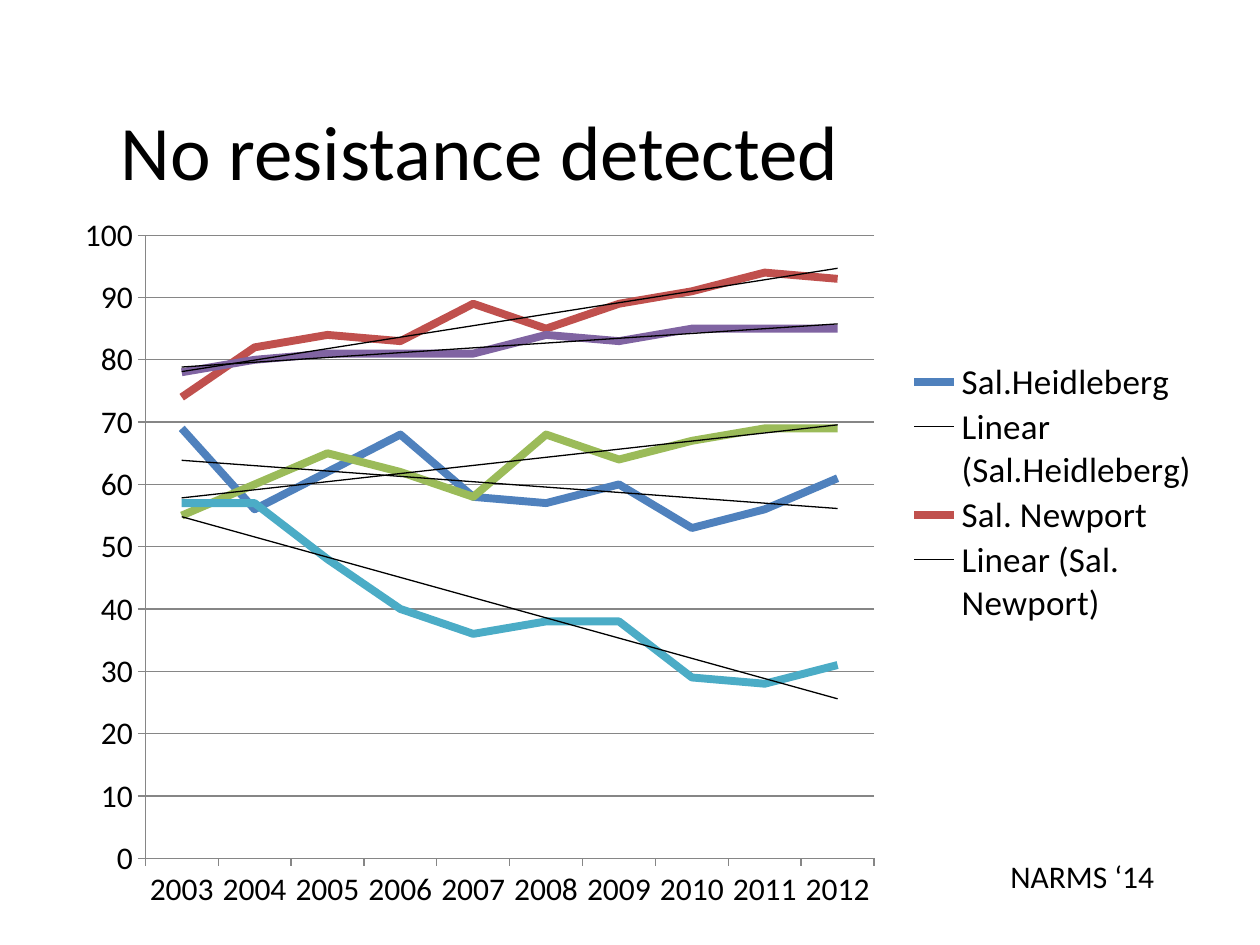
from lxml.etree import SubElement
from pptx import Presentation
from pptx.chart.data import CategoryChartData
from pptx.dml.color import RGBColor
from pptx.enum.chart import XL_CHART_TYPE, XL_LEGEND_POSITION, XL_TICK_MARK
from pptx.enum.text import MSO_ANCHOR, PP_ALIGN
from pptx.oxml import parse_xml
from pptx.oxml.ns import nsdecls, qn
from pptx.util import Inches, Pt

WIDTH, HEIGHT = 10, 7.5
FONT, BLACK, GRAY = "Calibri", "000000", "868686"
YEARS = [str(year) for year in range(2003, 2013)]
SEROTYPES = [
    ("Sal.Heidleberg", "4F81BD", (69, 56, 62, 68, 58, 57, 60, 53, 56, 61)),
    ("Sal. Newport", "C0504D", (74, 82, 84, 83, 89, 85, 89, 91, 94, 93)),
    ("", "9BBB59", (55, 60, 65, 62, 58, 68, 64, 67, 69, 69)),
    ("", "8064A2", (78, 80, 81, 81, 81, 84, 83, 85, 85, 85)),
    ("", "4BACC6", (57, 57, 48, 40, 36, 38, 38, 29, 28, 31)),
]


def color(value):
    return RGBColor.from_string(value)


def box(x, y, w, h):
    return (Inches(round(x * WIDTH, 2)), Inches(round(y * HEIGHT, 2)),
            Inches(round(w * WIDTH, 2)), Inches(round(h * HEIGHT, 2)))


def set_font(font, size):
    font.name = FONT
    font.size = Pt(size)
    font.bold = False
    font.color.rgb = color(BLACK)


def set_line(line, value, width):
    line.color.rgb = color(value)
    line.width = Pt(width)


def set_text(sp, text, size):
    tf = sp.text_frame
    tf.word_wrap = True
    p = tf.paragraphs[0]
    p.text = text
    p.alignment = PP_ALIGN.LEFT
    set_font(p.font, size)
    return tf


def add_title(s, text):
    sp = s.shapes.title
    sp.left, sp.top, sp.width, sp.height = box(0.096, 0.105, 0.887, 0.107)
    tf = set_text(sp, text, 44)
    tf.vertical_anchor = MSO_ANCHOR.MIDDLE
    tf.margin_left = tf.margin_right = tf.margin_top = tf.margin_bottom = 0


def add_trend(series):
    trend = parse_xml(
        f'<c:trendline {nsdecls("c", "a")}><c:spPr><a:ln w="9525"><a:solidFill>'
        f'<a:srgbClr val="{BLACK}"/></a:solidFill></a:ln></c:spPr>'
        '<c:trendlineType val="linear"/><c:dispRSqr val="0"/><c:dispEq val="0"/>'
        '</c:trendline>')
    series._element.find(qn("c:cat")).addprevious(trend)


def make_layout(parent, target, x, y, w, h):
    for old in parent.findall(qn("c:layout")):
        parent.remove(old)
    layout = parse_xml(f'<c:layout {nsdecls("c")}/>')
    manual = SubElement(layout, qn("c:manualLayout"))
    if target:
        SubElement(manual, qn("c:layoutTarget")).set("val", target)
    for mode in ("xMode", "yMode"):
        SubElement(manual, qn(f"c:{mode}")).set("val", "edge")
    for name, value in zip("xywh", (x, y, w, h)):
        SubElement(manual, qn(f"c:{name}")).set("val", str(value))
    return layout


def format_axis(axis):
    axis.major_tick_mark = XL_TICK_MARK.OUTSIDE
    axis.minor_tick_mark = XL_TICK_MARK.NONE
    set_line(axis.format.line, GRAY, 0.75)
    set_font(axis.tick_labels.font, 18)


def format_legend(chart):
    chart.has_legend = True
    legend = chart.legend
    legend.position = XL_LEGEND_POSITION.RIGHT
    legend.include_in_layout = False
    set_font(legend.font, 20)
    element = legend._element
    layout = make_layout(element, None, 0.717, 0.22, 0.25, 0.37)
    element.find(qn("c:legendPos")).addnext(layout)
    names = [name for name, _, _ in SEROTYPES]
    for index, name in enumerate(names + names):
        if not name:
            layout.addprevious(parse_xml(
                f'<c:legendEntry {nsdecls("c")}><c:idx val="{index}"/>'
                '<c:delete val="1"/></c:legendEntry>'))


def add_line_chart(s):
    data = CategoryChartData(number_format="General")
    data.categories = YEARS
    for name, _, values in SEROTYPES:
        data.add_series(name, values)
    chart = s.shapes.add_chart(
        XL_CHART_TYPE.LINE, *box(0.05, 0.211, 0.933, 0.767), data).chart
    chart.has_title = False
    set_font(chart.font, 18)
    chart.plots[0].vary_by_categories = False
    for series, (_, value, _) in zip(chart.plots[0].series, SEROTYPES):
        series.smooth = False
        set_line(series.format.line, value, 4.5)
        add_trend(series)
    for axis in (chart.category_axis, chart.value_axis):
        format_axis(axis)
    axis = chart.value_axis
    axis.minimum_scale, axis.maximum_scale, axis.major_unit = 0, 100, 10
    axis.has_major_gridlines = True
    set_line(axis.major_gridlines.format.line, GRAY, 0.75)
    area = chart._chartSpace.find(f'{qn("c:chart")}/{qn("c:plotArea")}')
    area.insert(0, make_layout(area, "inner", 0.07, 0.05, 0.62, 0.86))
    format_legend(chart)


def add_source(s, text):
    sp = s.shapes.add_textbox(*box(0.792, 0.9, 0.192, 0.056))
    set_text(sp, text, 18)


def main():
    prs = Presentation()
    prs.slide_width, prs.slide_height = Inches(WIDTH), Inches(HEIGHT)
    s = prs.slides.add_slide(prs.slide_layouts[5])
    add_title(s, "No resistance detected")
    add_line_chart(s)
    add_source(s, "NARMS ‘14")
    prs.save("out.pptx")


if __name__ == "__main__":
    main()
